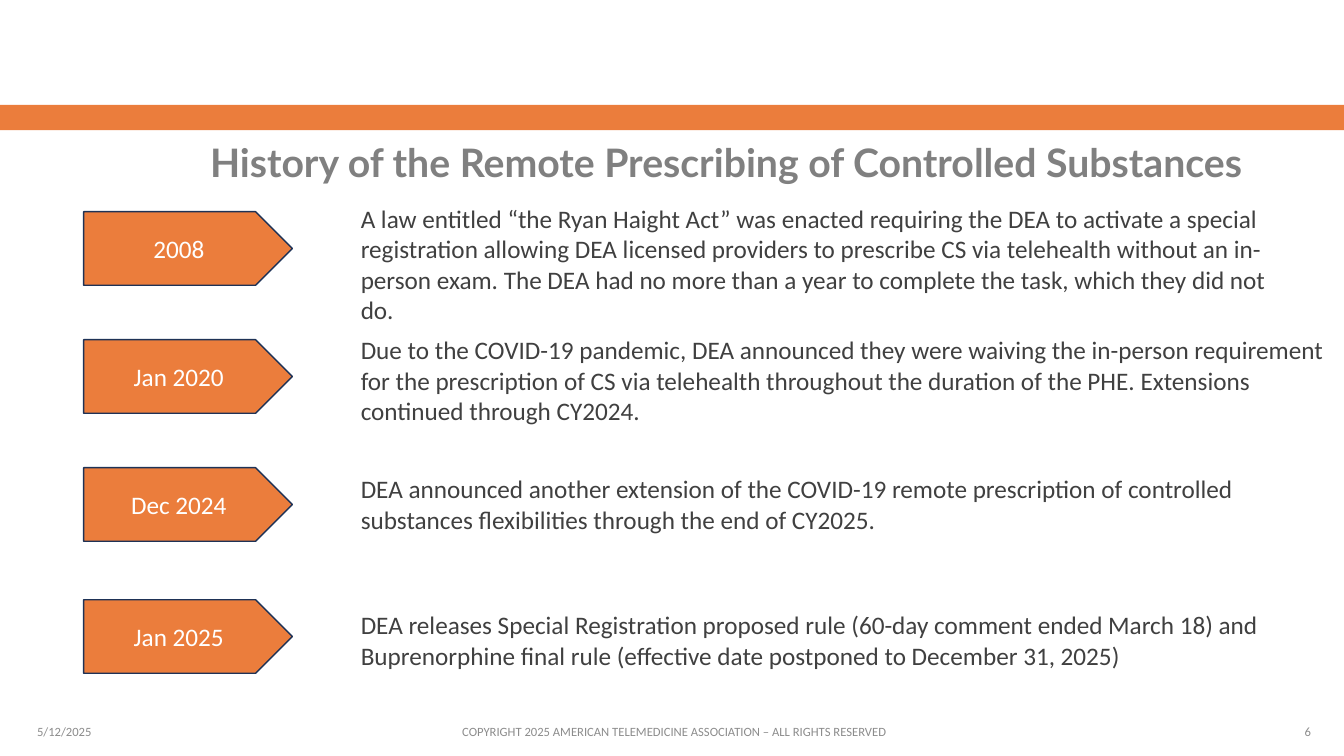
from pptx import Presentation
from pptx.dml.color import RGBColor
from pptx.enum.shapes import MSO_SHAPE
from pptx.enum.text import MSO_ANCHOR, PP_ALIGN
from pptx.util import Pt

LEFT, CENTER, RIGHT = PP_ALIGN.LEFT, PP_ALIGN.CENTER, PP_ALIGN.RIGHT
TOP, MIDDLE, BOTTOM = MSO_ANCHOR.TOP, MSO_ANCHOR.MIDDLE, MSO_ANCHOR.BOTTOM
RECTANGLE, PENTAGON = MSO_SHAPE.RECTANGLE, MSO_SHAPE.PENTAGON

PX = 9144  # 100 px to the inch

THEME = {
    "orange": RGBColor(0xEB, 0x7D, 0x3C),
    "navy": RGBColor(0x1E, 0x32, 0x56),
    # text styles: font, size, colour, bold
    "title": ("Lato", 28, RGBColor(0x80, 0x80, 0x80), True),
    "date": ("Calibri", 18, RGBColor(0xFF, 0xFF, 0xFF), False),
    "event": ("Calibri", 18, RGBColor(0x40, 0x40, 0x40), False),
    "footer": ("Calibri", 9, RGBColor(0x8C, 0x8C, 0x8C), False),
}

prs = Presentation()
prs.slide_width, prs.slide_height = 1333 * PX, 750 * PX
slide = prs.slides.add_slide(prs.slide_layouts[6])


def write(holder, text, style, align=LEFT, anchor=TOP):
    """Fill a shape or text box with one styled run and return its paragraph."""
    frame = holder.text_frame
    frame.word_wrap = True
    frame.vertical_anchor = anchor
    paragraph = frame.paragraphs[0]
    paragraph.alignment = align
    run = paragraph.add_run()
    run.text = text
    font = run.font
    font.name, size, font.color.rgb, font.bold = THEME[style]
    font.size = Pt(size)
    return paragraph


def add_block(preset, left, top, width, height):
    """Add an orange preset shape, or a text box when preset is None."""
    box = [length * PX for length in (left, top, width, height)]
    if preset is None:
        return slide.shapes.add_textbox(*box)
    block = slide.shapes.add_shape(preset, *box)
    block.shadow.inherit = False
    block.fill.solid()
    block.fill.fore_color.rgb = THEME["orange"]
    return block


band = add_block(RECTANGLE, 0, 104, 1333, 25)
band.line.fill.background()

footers = [
    (27, 300, "5/12/2025", LEFT),
    (327, 683, "COPYRIGHT 2025 AMERICAN TELEMEDICINE ASSOCIATION – ALL RIGHTS RESERVED", CENTER),
    (1010, 300, "6", RIGHT),
]
for left, width, text, align in footers:
    write(add_block(None, left, 706, width, 40), text, "footer", align, MIDDLE)

title = write(add_block(None, 146, 149, 1148, 40),
              "History of the Remote Prescribing of Controlled Substances",
              "title", CENTER, BOTTOM)
title.line_spacing = 0.9

# date, arrow top, event top, event width, event height, event
milestones = [
    ("2008", 210, 197, 946, 131,
     "A law entitled “the Ryan Haight Act” was enacted requiring the DEA to activate "
     "a special registration allowing DEA licensed providers to prescribe CS via "
     "telehealth without an in-person exam. The DEA had no more than a year to "
     "complete the task, which they did not do."),
    ("Jan 2020", 337, 327, 976, 101,
     "Due to the COVID-19 pandemic, DEA announced they were waiving the in-person "
     "requirement for the prescription of CS via telehealth throughout the duration "
     "of the PHE. Extensions continued through CY2024."),
    ("Dec 2024", 464, 465, 976, 71,
     "DEA announced another extension of the COVID-19 remote prescription of "
     "controlled substances flexibilities through the end of CY2025."),
    ("Jan 2025", 595, 600, 976, 71,
     "DEA releases Special Registration proposed rule (60-day comment ended March 18) "
     "and Buprenorphine final rule (effective date postponed to December 31, 2025)"),
]
for date, arrow_top, event_top, event_width, event_height, event in milestones:
    arrow = add_block(PENTAGON, 83, arrow_top, 207, 73)
    arrow.line.color.rgb = THEME["navy"]
    arrow.line.width = Pt(1)
    write(arrow, date, "date", CENTER, MIDDLE)
    write(add_block(None, 348, event_top, event_width, event_height), event, "event")

prs.save("out.pptx")
